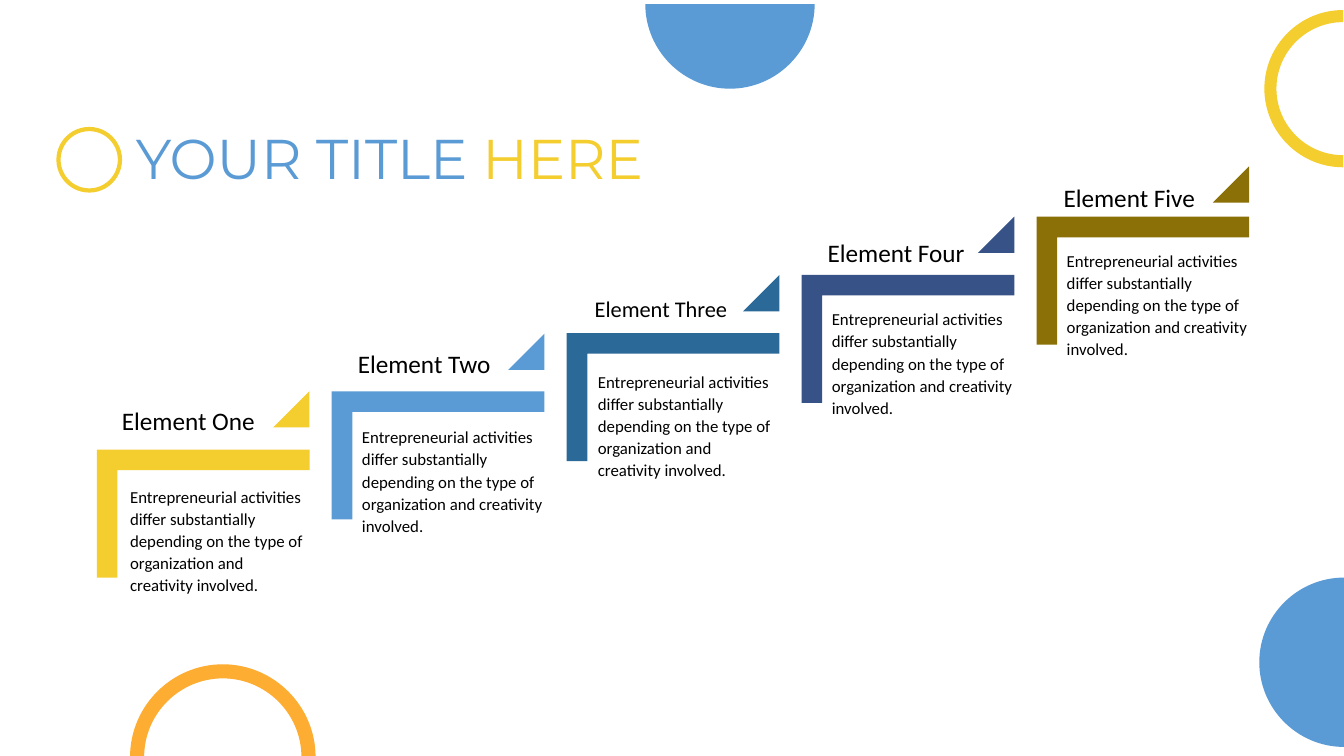
import pptx
import pptx.util
import pptx.dml.color
import pptx.enum.shapes
import pptx.enum.text
import pptx.oxml.ns

Inches = pptx.util.Inches
Pt = pptx.util.Pt
qn = pptx.oxml.ns.qn
PRESET = pptx.enum.shapes.MSO_SHAPE
ANCHOR = pptx.enum.text.MSO_ANCHOR
GROW = pptx.enum.text.MSO_AUTO_SIZE.SHAPE_TO_FIT_TEXT

WIDTH, HEIGHT = 13.33, 7.5
COLUMN, RISE = 2.33, 0.077 * HEIGHT
BRACKET_WIDTH, BRACKET_HEIGHT = 2.11, 1.27
TURN = (BRACKET_WIDTH - BRACKET_HEIGHT) / 2
FLAG = 0.36
YELLOW, BLUE, BLACK = "F4CD2F", "5B9BD5", "000000"

deck = pptx.Presentation()
deck.slide_width, deck.slide_height = Inches(WIDTH), Inches(HEIGHT)
slide = deck.slides.add_slide(deck.slide_layouts[6])
shapes = slide.shapes


def colour(hex_value):
    return pptx.dml.color.RGBColor.from_string(hex_value)


def write(area, runs, size, font, frame_format, line_spacing):
    frame = shapes.add_textbox(*map(Inches, area)).text_frame
    for key, value in frame_format.items():
        setattr(frame, key, value)
    paragraph = frame.paragraphs[0]
    paragraph.line_spacing = line_spacing
    for words, hex_value in runs:
        run = paragraph.add_run()
        run.text = words
        for key, value in {"size": Pt(size), "name": font}.items():
            setattr(run.font, key, value)
        run.font.color.rgb = colour(hex_value)


body_format = {
    "word_wrap": True, "vertical_anchor": ANCHOR.MIDDLE,
    "margin_left": 0, "margin_right": 0, "margin_top": 0, "margin_bottom": 0,
}
heading_format = {"word_wrap": False, "auto_size": GROW}
title_format = {"word_wrap": True, "auto_size": GROW}

description = (
    "Entrepreneurial activities differ substantially depending on "
    "the type of organization and creativity involved."
)
steps = [
    ("Element One", YELLOW, 18, (1.11, 3.97, 1.52, 0.4), (1.29, 4.7, 1.78), 3.88),
    ("Element Two", BLUE, 18, (3.45, 3.41, 1.52, 0.4), (3.59, 4.11, 1.81), 3.31),
    ("Element Three", "2B6998", 16, (5.8, 2.88, 1.52, 0.37), (5.93, 3.56, 1.78), 2.73),
    ("Element Four", "375287", 18, (8.11, 2.31, 1.56, 0.4), (8.25, 2.94, 1.81), 2.15),
    ("Element Five", "8A7007", 18, (10.45, 1.76, 1.52, 0.4), (10.58, 2.36, 1.81), 1.65),
]
painted = []

for step, (heading, tint, size, heading_area, body_area, flag_top) in enumerate(steps):
    left, top = 0.96 + step * COLUMN, 4.46 - step * RISE
    bracket = shapes.add_shape(
        PRESET.CORNER, Inches(left + TURN), Inches(top - TURN),
        Inches(BRACKET_HEIGHT), Inches(BRACKET_WIDTH))
    bracket.rotation = 90
    bracket.adjustments[0] = bracket.adjustments[1] = 0.161
    flag = shapes.add_shape(
        PRESET.ISOSCELES_TRIANGLE, Inches(left + BRACKET_WIDTH - FLAG),
        Inches(flag_top), Inches(FLAG), Inches(FLAG))
    flag.adjustments[0] = 1
    painted += [(bracket, tint), (flag, tint)]
    write((*body_area, 1.31), [(description, BLACK)], 12, "Calibri", body_format, 1.1)
    write(heading_area, [(heading, BLACK)], size, "Calibri", heading_format, None)

BEND = 0.55
half_circle = [(1, 0), (1, BEND), (BEND, 1), (0, 1), (-BEND, 1), (-1, BEND), (-1, 0)]
facing_down = half_circle
facing_up = [(x, -y) for x, y in half_circle]
facing_left = [(-y, x) for x, y in half_circle]
half_rounds = [
    (WIDTH, 6.57, 0.84, 0, facing_left, BLUE),
    (2.21, 7.51, 0.92, 0.78, facing_up, "FDAD32"),
    (13.32, 0.88, 0.78, 0.66, facing_left, YELLOW),
    (7.24, 0.04, 0.84, 0, facing_down, BLUE),
]
for centre_x, centre_y, outer, inner, arc, tint in half_rounds:
    rim = [(outer * x, outer * y) for x, y in arc]
    curve_starts = [0, 3]
    if inner:
        rim += [(inner * x, inner * y) for x, y in reversed(arc)]
        curve_starts += [7, 10]
    points = [(Inches(centre_x + x), Inches(centre_y + y)) for x, y in rim]
    outline = shapes.build_freeform(*points[0])
    outline.add_line_segments(points[1:], close=True)
    half_round = outline.convert_to_shape()
    segments = list(half_round.element.iter(qn("a:lnTo")))
    for start in curve_starts:
        curve = segments[start]
        curve.tag = qn("a:cubicBezTo")
        for segment in segments[start + 1:start + 3]:
            curve.append(segment[0])
            segment.getparent().remove(segment)
    painted.append((half_round, tint))

for shape, tint in painted:
    shape.shadow.inherit = False
    shape.fill.solid()
    shape.fill.fore_color.rgb = colour(tint)
    shape.line.fill.background()

write((1.25, 1.29, 7, 0.67), [("YOUR TITLE ", BLUE), ("HERE", YELLOW)],
      40, "Montserrat", title_format, Pt(40))

title_ring = shapes.add_shape(
    PRESET.OVAL, Inches(0.58), Inches(1.28), Inches(0.61), Inches(0.61))
title_ring.shadow.inherit = False
title_ring.fill.background()
title_ring.line.color.rgb = colour(YELLOW)
title_ring.line.width = Pt(3)

deck.save("out.pptx")
